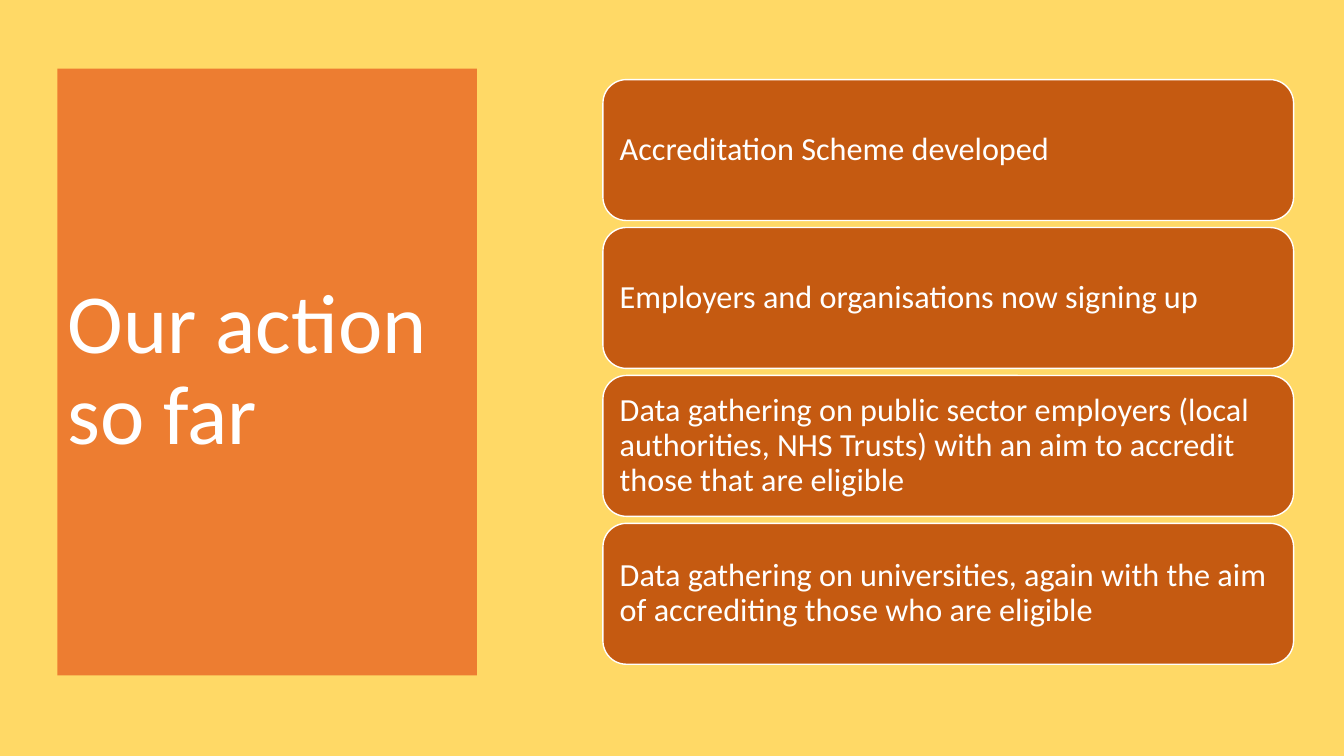
from pptx import Presentation
from pptx.dml.color import RGBColor
from pptx.enum.shapes import MSO_SHAPE
from pptx.enum.text import MSO_ANCHOR, MSO_AUTO_SIZE, PP_ALIGN
from pptx.util import Inches, Pt

ACTIONS = [
    "Accreditation Scheme developed",
    "Employers and organisations now signing up",
    "Data gathering on public sector employers (local authorities, NHS Trusts) "
    "with an aim to accredit those that are eligible",
    "Data gathering on universities, again with the aim of accrediting those "
    "who are eligible",
]


def paint(fill, color):
    """Give a fill one solid colour from a hex string."""
    fill.solid()
    fill.fore_color.rgb = RGBColor.from_string(color)


def write(shape, text, size=23, color="FFFFFF", font="Calibri", inset=0.1):
    """Put left-aligned, vertically centred text in a shape."""
    frame = shape.text_frame
    frame.text = text
    frame.word_wrap = True
    frame.auto_size = MSO_AUTO_SIZE.NONE
    frame.vertical_anchor = MSO_ANCHOR.MIDDLE
    frame.margin_left = frame.margin_right = Inches(inset)
    frame.margin_top = frame.margin_bottom = Inches(inset)
    para = frame.paragraphs[0]
    para.alignment = PP_ALIGN.LEFT
    para.line_spacing = 0.9
    run = para.runs[0]
    run.font.size = Pt(size)
    run.font.name = font
    paint(run.font.fill, color)


def add_title(slide, text, left, top, width, height):
    """Place the title as a coloured panel in the given box."""
    title = slide.shapes.title
    title.left, title.top = Inches(left), Inches(top)
    title.width, title.height = Inches(width), Inches(height)
    paint(title.fill, "ED7D31")
    write(title, text, size=60)


def add_cards(slide, items, left, top, width, height, gap=0.07):
    """Stack equal rounded cards to fill the given box."""
    tall = (height - gap * (len(items) - 1)) / len(items)
    for index, item in enumerate(items):
        card = slide.shapes.add_shape(
            MSO_SHAPE.ROUNDED_RECTANGLE,
            Inches(left), Inches(top + index * (tall + gap)),
            Inches(width), Inches(tall))
        card.shadow.inherit = False
        paint(card.fill, "C55A11")
        paint(card.line.fill, "FFFFFF")
        card.line.width = Pt(1)
        write(card, item)


def main():
    """Build and save the slide."""
    deck = Presentation()
    deck.slide_width, deck.slide_height = Inches(13.33), Inches(7.5)
    slide = deck.slides.add_slide(deck.slide_layouts[5])
    paint(slide.background.fill, "FFD966")
    add_title(slide, "Our action so far", 0.57, 0.68, 4.16, 6.02)
    add_cards(slide, ACTIONS, 5.98, 0.79, 6.85, 5.8)
    deck.save("out.pptx")


if __name__ == "__main__":
    main()
